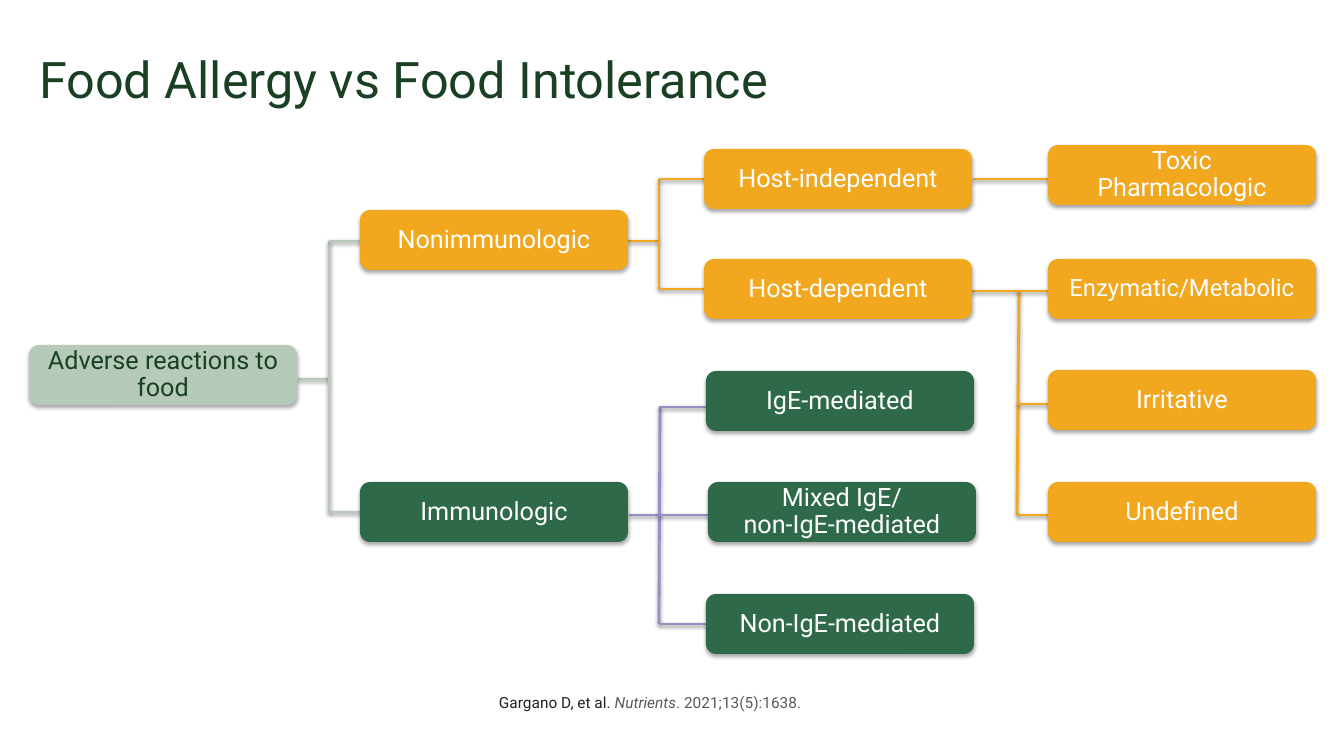
from dataclasses import dataclass

from lxml import etree
from pptx import Presentation
from pptx.dml.color import RGBColor
from pptx.enum.shapes import MSO_CONNECTOR as Connector, MSO_SHAPE as Shape
from pptx.enum.text import MSO_ANCHOR as Anchor, MSO_AUTO_SIZE as AutoSize, PP_ALIGN as Align
from pptx.oxml.ns import qn
from pptx.util import Emu, Pt


@dataclass(frozen=True)
class Theme:
    font: str = "Roboto"
    dark: str = "1A4023"
    sage: str = "B6CAB9"
    amber: str = "F1A71E"
    green: str = "2E6A49"
    violet: str = "9591C7"
    white: str = "FFFFFF"
    ink: str = "212121"
    grey: str = "565B5D"
    title_size: float = 36
    box_size: float = 18
    tight_size: float = 17
    citation_size: float = 11
    line_width: float = 2
    line_spacing: float = 0.9


THEME = Theme()
BOX_WIDTH, BOX_HEIGHT = 268, 60
ROOT_X, CLASS_X, TYPE_X, CAUSE_X = 29, 360, 704, 1048

# Left, top, text, fill
BOXES = [
    (ROOT_X, 345, "Adverse reactions to food", THEME.sage),
    (CLASS_X, 210, "Nonimmunologic", THEME.amber),
    (CLASS_X, 482, "Immunologic", THEME.green),
    (TYPE_X, 149, "Host-independent", THEME.amber),
    (TYPE_X, 259, "Host-dependent", THEME.amber),
    (CAUSE_X, 145, "Toxic\nPharmacologic", THEME.amber),
    (CAUSE_X, 259, "Enzymatic/Metabolic", THEME.amber),
    (CAUSE_X, 370, "Irritative", THEME.amber),
    (CAUSE_X, 482, "Undefined", THEME.amber),
    (TYPE_X + 2, 371, "IgE-mediated", THEME.green),
    (TYPE_X + 4, 482, "Mixed IgE/\vnon-IgE-mediated", THEME.green),
    (TYPE_X + 2, 594, "Non-IgE-mediated", THEME.green),
]

# Colour, stem start, spine foot x, spine head x, arm end x, stem y, arm heights from top to bottom
BRANCHES = [
    (THEME.sage, 298, 329, 329, 371, 379, (241, 512)),
    (THEME.amber, 628, 659, 659, 719, 241, (179, 289)),
    (THEME.violet, 629, 659, 660, 719, 515, (407, 515, 624)),
    (THEME.amber, 971, 1017, 1019, 1067, 291, (291, 404, 515)),
]


def px(count):
    return Emu(round(count * 914400 / 100.8))


def place(shape, left, top, width, height):
    shape.left, shape.top = px(left), px(top)
    shape.width, shape.height = px(width), px(height)


def style_font(font, size, colour):
    font.name = THEME.font
    font.size = Pt(size)
    font.color.rgb = RGBColor.from_string(colour)


def add_shadow(shape, distance, opacity):
    effects = etree.SubElement(shape._element.spPr, qn("a:effectLst"))
    shadow = etree.SubElement(effects, qn("a:outerShdw"), blurRad=str(Pt(3.1)),
                              dist=str(Pt(distance)), dir="5400000",
                              algn="t", rotWithShape="0")
    colour = etree.SubElement(shadow, qn("a:srgbClr"), val="000000")
    etree.SubElement(colour, qn("a:alpha"), val=str(opacity * 1000))


def add_line(slide, colour, x1, y1, x2, y2):
    line = slide.shapes.add_connector(Connector.STRAIGHT, px(x1), px(y1), px(x2), px(y2))
    line.line.color.rgb = RGBColor.from_string(colour)
    line.line.width = Pt(THEME.line_width)
    add_shadow(line, 1.6, 38)


def add_branch(slide, colour, start, foot, head, end, stem_y, arms):
    add_line(slide, colour, start, stem_y, head, stem_y)
    add_line(slide, colour, foot, arms[-1], head, arms[0])
    for arm_y in arms:
        add_line(slide, colour, foot, arm_y, end, arm_y)


def add_box(slide, left, top, text, fill):
    box = slide.shapes.add_shape(Shape.ROUNDED_RECTANGLE, px(left), px(top),
                                 px(BOX_WIDTH), px(BOX_HEIGHT))
    box.fill.solid()
    box.fill.fore_color.rgb = RGBColor.from_string(fill)
    box.line.fill.background()
    add_shadow(box, 1.8, 35)
    frame = box.text_frame
    frame.word_wrap = True
    frame.vertical_anchor = Anchor.MIDDLE
    frame.text = text
    size = THEME.tight_size if "/Metabolic" in text else THEME.box_size
    for para in frame.paragraphs:
        para.alignment = Align.CENTER
        para.line_spacing = THEME.line_spacing
        style_font(para.font, size, THEME.dark if fill == THEME.sage else THEME.white)


def set_title(title, text):
    place(title, 29, 19, 1288, 126)
    frame = title.text_frame
    frame.text = text
    frame.auto_size = AutoSize.NONE
    frame.vertical_anchor = Anchor.MIDDLE
    para = frame.paragraphs[0]
    para.alignment = Align.LEFT
    para.line_spacing = THEME.line_spacing
    style_font(para.font, THEME.title_size, THEME.dark)


def set_citation(body, spans):
    place(body, 486, 690, 376, 24)
    frame = body.text_frame
    frame.auto_size = AutoSize.NONE
    frame.margin_left = px(13)
    para = frame.paragraphs[0]
    para.line_spacing = THEME.line_spacing
    para.space_before = Pt(0)
    properties = para._p.get_or_add_pPr()
    properties.set("marL", "0")
    properties.set("indent", "0")
    etree.SubElement(properties, qn("a:buNone"))
    for text, colour, italic in spans:
        span = para.add_run()
        span.text = text
        span.font.italic = italic
        style_font(span.font, THEME.citation_size, colour)


def main():
    deck = Presentation()
    deck.slide_width, deck.slide_height = px(1344), px(756)
    slide = deck.slides.add_slide(deck.slide_layouts[1])

    # Title and citation
    set_title(slide.shapes.title, "Food Allergy vs Food Intolerance")
    set_citation(slide.placeholders[1], [
        ("Gargano D, et al. ", THEME.ink, False),
        ("Nutrients", THEME.grey, True),
        (". 2021;13(5):1638.", THEME.grey, False),
    ])

    # Tree lines, behind the boxes
    for branch in BRANCHES:
        add_branch(slide, *branch)
    add_line(slide, THEME.amber, 973, 179, 1070, 179)

    # Tree boxes
    for box in BOXES:
        add_box(slide, *box)

    deck.save("out.pptx")


if __name__ == "__main__":
    main()
